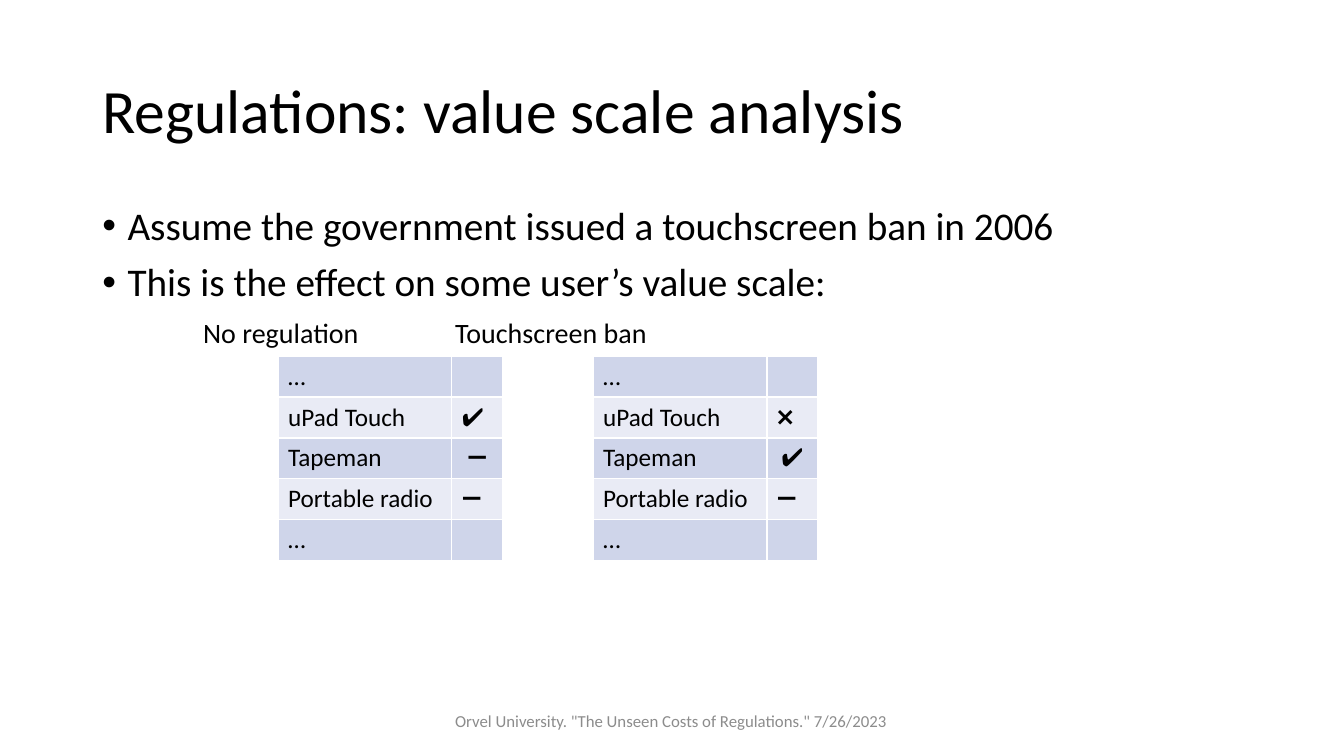
import pptx
import pptx.dml.color
import pptx.enum.text
import pptx.oxml
import pptx.oxml.ns
import pptx.util

RGBColor = pptx.dml.color.RGBColor
ALIGN = pptx.enum.text.PP_ALIGN
ANCHOR = pptx.enum.text.MSO_ANCHOR
Pt = pptx.util.Pt

BLACK = RGBColor(0x00, 0x00, 0x00)
GREY = RGBColor(0x8C, 0x8C, 0x8C)
WHITE = RGBColor(0xFF, 0xFF, 0xFF)
BANDS = (RGBColor(0xCF, 0xD5, 0xEA), RGBColor(0xE9, 0xEB, 0xF5))

GRID_COLUMNS, GRID_ROWS = 160, 90
BODY_FORMAT = {"line_spacing": 0.9, "space_before": Pt(10)}
CENTRED = {"alignment": ALIGN.CENTER}


def set_attributes(target, values):
    for name, value in values.items():
        setattr(target, name, value)


class ValueScaleSlide:
    """Holds the font, the grid and the slide being drawn."""

    font_name = "Calibri"

    def __init__(self, presentation):
        self.column = presentation.slide_width / GRID_COLUMNS
        self.row = presentation.slide_height / GRID_ROWS
        self.slide = presentation.slides.add_slide(presentation.slide_layouts[6])

    def place(self, left, top, width, height):
        """Turn grid columns and rows into slide lengths."""
        return [round(left * self.column), round(top * self.row),
                round(width * self.column), round(height * self.row)]

    def add_text(self, paragraph, text, size, color=BLACK, layout=None):
        run = paragraph.add_run()
        run.text = text
        set_attributes(run.font, {"name": self.font_name, "size": Pt(size)})
        run.font.color.rgb = color
        set_attributes(paragraph, layout or {})

    def text_box(self, box, anchor):
        frame = self.slide.shapes.add_textbox(*self.place(*box)).text_frame
        set_attributes(frame, {"word_wrap": True, "vertical_anchor": anchor})
        return frame

    def line(self, box, text, size, color, layout):
        frame = self.text_box(box, ANCHOR.MIDDLE)
        self.add_text(frame.paragraphs[0], text, size, color, layout)

    def body(self, box, bullets, captions):
        """Add the bullets, then one line of tabbed table captions."""
        frame = self.text_box(box, ANCHOR.TOP)
        for index, text in enumerate(bullets):
            paragraph = frame.add_paragraph() if index else frame.paragraphs[0]
            self.add_text(paragraph, text, 28, layout=BODY_FORMAT)
            self.add_bullet(paragraph)
        self.add_text(frame.add_paragraph(), captions, 20, layout=BODY_FORMAT)

    def add_bullet(self, paragraph):
        properties = paragraph._p.get_or_add_pPr()
        indent = pptx.util.Inches(0.25)
        properties.set("marL", str(indent))
        properties.set("indent", str(-indent))
        namespace = pptx.oxml.ns.nsdecls("a")
        for tag in ('buFont {} typeface="Arial"', 'buChar {} char="•"'):
            properties.append(pptx.oxml.parse_xml(f"<a:{tag.format(namespace)}/>"))

    def scale_table(self, left, top, widths, row_height, rows, centred_row):
        """Draw a banded scale of goods with a mark beside each."""
        box = self.place(left, top, sum(widths), row_height * len(rows))
        table = self.slide.shapes.add_table(len(rows), len(widths), *box).table
        set_attributes(table, {"first_row": False, "horz_banding": False})
        for column, width in zip(table.columns, widths):
            column.width = round(width * self.column)
        for row_index, texts in enumerate(rows):
            table.rows[row_index].height = round(row_height * self.row)
            for column_index, text in enumerate(texts):
                cell = table.cell(row_index, column_index)
                self.add_borders(cell)
                cell.fill.solid()
                cell.fill.fore_color.rgb = BANDS[row_index % len(BANDS)]
                if text:
                    centred = column_index == 1 and row_index == centred_row
                    self.add_text(cell.text_frame.paragraphs[0], text, 18,
                                  layout=CENTRED if centred else None)

    def add_borders(self, cell):
        properties = cell._tc.get_or_add_tcPr()
        for side in "LRTB":
            properties.append(pptx.oxml.parse_xml(
                f'<a:ln{side} {pptx.oxml.ns.nsdecls("a")} w="{Pt(1)}"><a:solidFill>'
                f'<a:srgbClr val="{WHITE}"/></a:solidFill></a:ln{side}>'))


def main():
    presentation = pptx.Presentation()
    presentation.slide_width = pptx.util.Inches(13.33)
    presentation.slide_height = pptx.util.Inches(7.5)
    page = ValueScaleSlide(presentation)

    page.line((11, 4.8, 138, 17.4), "Regulations: value scale analysis", 44, BLACK,
              {"line_spacing": 0.9})
    page.body((11, 24, 138, 57),
              ["Assume the government issued a touchscreen ban in 2006",
               "This is the effect on some user’s value scale:"],
              "\t\tNo regulation\t\tTouchscreen ban")
    page.line((28.2, 83.4, 103.4, 4.8),
              'Orvel University. "The Unseen Costs of Regulations." 7/26/2023',
              12, GREY, CENTRED)

    goods = ("…", "uPad Touch", "Tapeman", "Portable radio", "…")
    scales = (("", "✔️", "➖", "➖", ""), ("", "❌", "✔️", "➖", ""))
    for index, marks in enumerate(scales):
        page.scale_table(33.1 + 37.5 * index, 42.4, (20.7, 6.05), 4.87,
                         list(zip(goods, marks)), centred_row=2)
    presentation.save("out.pptx")


if __name__ == "__main__":
    main()
